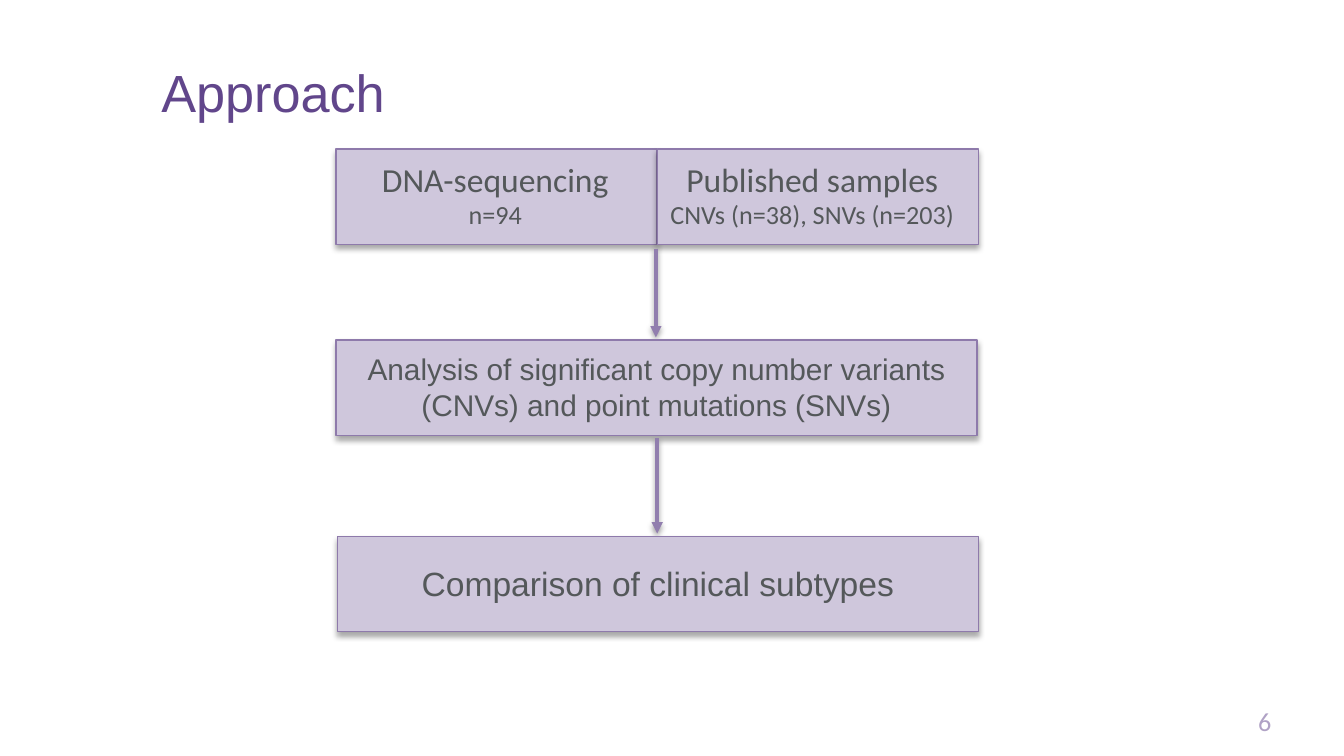
from lxml.etree import SubElement
from pptx import Presentation
from pptx.dml.color import RGBColor
from pptx.enum.shapes import MSO_CONNECTOR as Connector, MSO_SHAPE as Shape
from pptx.enum.text import MSO_ANCHOR as Anchor, PP_ALIGN as Align
from pptx.oxml.ns import qn
from pptx.util import Inches, Pt

COLORS = {
    "title": "61468B",
    "number": "B0A2C5",
    "text": "54585A",
    "box": "CFC7DC",
    "border": "8E7AAB",
    "arrow": "917EAE",
    "shadow": "000000",
}
BOX_HEIGHT = 0.71


def color(name):
    return RGBColor.from_string(COLORS[name])


def add_shadow(shape, distance, opacity):
    effects = SubElement(shape._element.spPr, qn("a:effectLst"))
    shadow = SubElement(effects, qn("a:outerShdw"), blurRad=str(Pt(3.1)),
                        dist=str(Pt(distance)), dir="5400000", rotWithShape="0")
    tint = SubElement(shadow, qn("a:srgbClr"), val=COLORS["shadow"])
    SubElement(tint, qn("a:alpha"), val=str(opacity * 1000))


def add_text(page, box, lines, font, tone, align=Align.CENTER,
             anchor=Anchor.TOP, insets=(0.1, 0.05, 0.1, 0.05), wrap=True):
    frame = page.shapes.add_textbox(*map(Inches, box)).text_frame
    frame.word_wrap = wrap
    frame.vertical_anchor = anchor
    (frame.margin_left, frame.margin_top,
     frame.margin_right, frame.margin_bottom) = map(Inches, insets)
    frame.text = "\n".join(text for text, size in lines)
    for para, (text, size) in zip(frame.paragraphs, lines):
        para.alignment = align
        for span in para.runs:
            span.font.name = font
            span.font.size = Pt(size)
            span.font.color.rgb = color(tone)
    return frame


def add_step(page, box, label, lines, font, wrap=True):
    left, top, width, height = box
    panel = page.shapes.add_shape(Shape.RECTANGLE, *map(Inches, box))
    panel.fill.solid()
    panel.fill.fore_color.rgb = color("box")
    panel.line.color.rgb = color("border")
    panel.line.width = Pt(0.75)
    add_shadow(panel, 1.8, 35)
    inset, drop, label_width, label_height = label
    add_text(page, (left + inset, top + drop, label_width, label_height),
             lines, font, "text", wrap=wrap)


def add_arrow(page, x, top, bottom):
    arrow = page.shapes.add_connector(
        Connector.STRAIGHT, *map(Inches, (x, top, x, bottom)))
    arrow.line.color.rgb = color("arrow")
    arrow.line.width = Pt(2)
    SubElement(arrow.line._get_or_add_ln(), qn("a:tailEnd"), type="triangle")
    add_shadow(arrow, 1.6, 38)


def add_heading(page, box):
    frame = add_text(page, box, [("Approach", 28)], "Arial", "title",
                     Align.LEFT, Anchor.BOTTOM, (0, 0, 0.1, 0.05))
    frame.paragraphs[0].line_spacing = 0.9


def add_page_number(page, box):
    add_text(page, box, [("6", 14)], "Calibri", "number",
             Align.RIGHT, Anchor.BOTTOM, (0, 0, 0, 0), wrap=False)


def add_samples(page, box):
    left, top, width, height = box
    half = width / 2
    add_step(page, (left, top, half, height), (0.23, 0.02, 1.91, 0.64),
             [("DNA-sequencing", 18), ("n=94", 14)], "Calibri", wrap=False)
    add_step(page, (left + half, top, half, height), (-0.01, 0.02, 2.33, 0.64),
             [("Published samples", 18), ("CNVs (n=38), SNVs (n=203)", 14)],
             "Calibri", wrap=False)


def add_flow(page, box):
    left, top, width, height = box
    analysis_top = top + 1.42
    comparison_top = top + height - BOX_HEIGHT
    add_samples(page, (left, top, width + 0.01, BOX_HEIGHT))
    add_arrow(page, left + 2.38, top + 0.74, analysis_top - 0.02)
    add_step(page, (left, analysis_top, width, BOX_HEIGHT),
             (0, 0.03, width, 0.64),
             [("Analysis of significant copy number variants "
               "(CNVs) and point mutations (SNVs)", 16)], "Arial")
    add_arrow(page, left + 2.39, analysis_top + 0.73, comparison_top - 0.02)
    add_step(page, (left + 0.01, comparison_top, width, BOX_HEIGHT),
             (0.04, 0.15, 4.69, 0.4),
             [("Comparison of clinical subtypes", 18)], "Arial")


def main():
    deck = Presentation()
    deck.slide_width = Inches(10)
    deck.slide_height = deck.slide_width * 9 // 16
    page = deck.slides.add_slide(deck.slide_layouts[6])
    add_heading(page, (1.2, 0.14, 7.85, 0.83))
    add_page_number(page, (9.08, 5.23, 0.38, 0.25))
    add_flow(page, (2.5, 1.11, 4.77, 3.59))
    deck.save("out.pptx")


if __name__ == "__main__":
    main()
